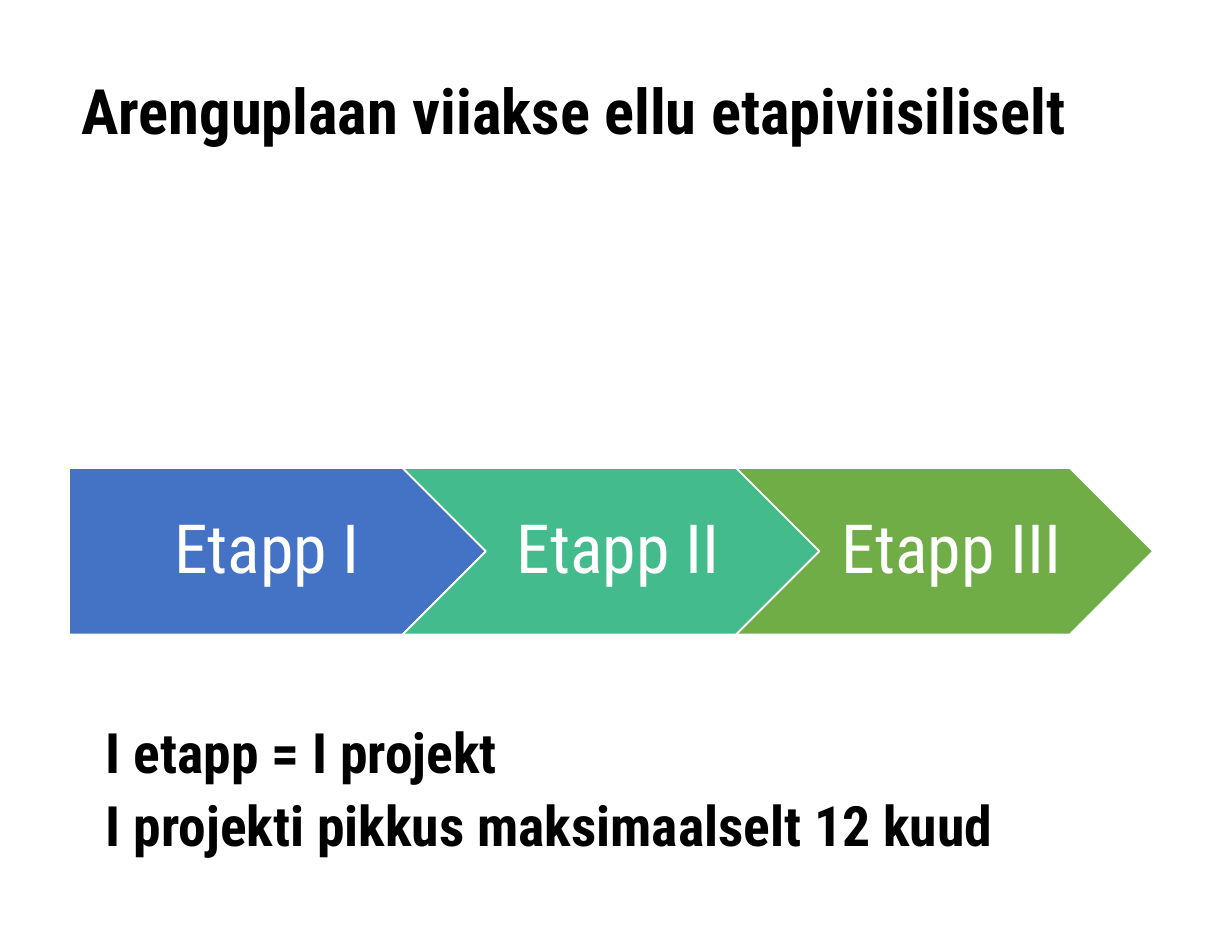
"""Builds a slide showing a development plan carried out in three stages."""
from dataclasses import dataclass

import pptx
import pptx.dml.color
import pptx.enum.shapes
import pptx.enum.text
import pptx.util
from pptx.util import Cm

COLORS = {
    "text": "000000",
    "outline": "FFFFFF",
    "first": "4472C4",
    "second": "43BB8D",
    "third": "70AD47",
}
FONT = "Roboto Condensed"
STAGE_LEFT, STAGE_TOP = 1.4, 9.5
STAGE_WIDTH, STAGE_HEIGHT = 8.46, 3.38
STAGE_STEP = 6.77


@dataclass
class Stage:
    label: str
    color: str
    outline: pptx.enum.shapes.MSO_SHAPE
    left_inset: float


@dataclass
class Note:
    lines: list[str]
    left: float
    top: float
    width: float
    height: float
    size: int
    spacing: float
    top_inset: float


STAGES = [
    Stage("Etapp I", "first", pptx.enum.shapes.MSO_SHAPE.PENTAGON, 0.58),
    Stage("Etapp II", "second", pptx.enum.shapes.MSO_SHAPE.CHEVRON, 0.43),
    Stage("Etapp III", "third", pptx.enum.shapes.MSO_SHAPE.CHEVRON, 0.43),
]
NOTES = [
    Note(["Arenguplaan viiakse ellu etapiviisiliselt"],
         1.4, 1.5, 22, 3, 36, 0.88, 0.15),
    Note(["I etapp = I projekt", "I projekti pikkus maksimaalselt 12 kuud"],
         1.9, 14.3, 22, 3.28, 32, 1.1, 0.13),
]


def rgb(name: str) -> pptx.dml.color.RGBColor:
    return pptx.dml.color.RGBColor.from_string(COLORS[name])


def style_paragraph(paragraph, size: int, color: str, spacing: float, bold: bool) -> None:
    paragraph.line_spacing = spacing
    paragraph.font.name = FONT
    paragraph.font.size = pptx.util.Pt(size)
    paragraph.font.bold = bold
    paragraph.font.color.rgb = rgb(color)


def draw_stage(slide, stage: Stage, position: int) -> None:
    arrow = slide.shapes.add_shape(
        stage.outline, Cm(STAGE_LEFT + position * STAGE_STEP), Cm(STAGE_TOP),
        Cm(STAGE_WIDTH), Cm(STAGE_HEIGHT))
    arrow.shadow.inherit = False
    arrow.fill.solid()
    arrow.fill.fore_color.rgb = rgb(stage.color)
    arrow.line.color.rgb = rgb("outline")
    arrow.line.width = pptx.util.Pt(1)

    label = arrow.text_frame
    label.word_wrap = True
    label.vertical_anchor = pptx.enum.text.MSO_ANCHOR.MIDDLE
    label.margin_left, label.margin_right = Cm(stage.left_inset), Cm(0.15)
    label.margin_top = label.margin_bottom = Cm(0.28)
    label.text = stage.label
    label.paragraphs[0].alignment = pptx.enum.text.PP_ALIGN.CENTER
    style_paragraph(label.paragraphs[0], 39, "outline", 0.9, False)


def draw_note(slide, note: Note) -> None:
    frame = slide.shapes.add_textbox(
        Cm(note.left), Cm(note.top), Cm(note.width), Cm(note.height)).text_frame
    frame.word_wrap = True
    frame.margin_top = Cm(note.top_inset)
    frame.text = "\n".join(note.lines)
    for paragraph in frame.paragraphs:
        style_paragraph(paragraph, note.size, "text", note.spacing, True)


def main() -> None:
    presentation = pptx.Presentation()
    presentation.slide_width, presentation.slide_height = Cm(25), Cm(19)
    slide = presentation.slides.add_slide(presentation.slide_layouts[6])
    for position, stage in enumerate(STAGES):
        draw_stage(slide, stage, position)
    for note in NOTES:
        draw_note(slide, note)
    presentation.save("out.pptx")


if __name__ == "__main__":
    main()
